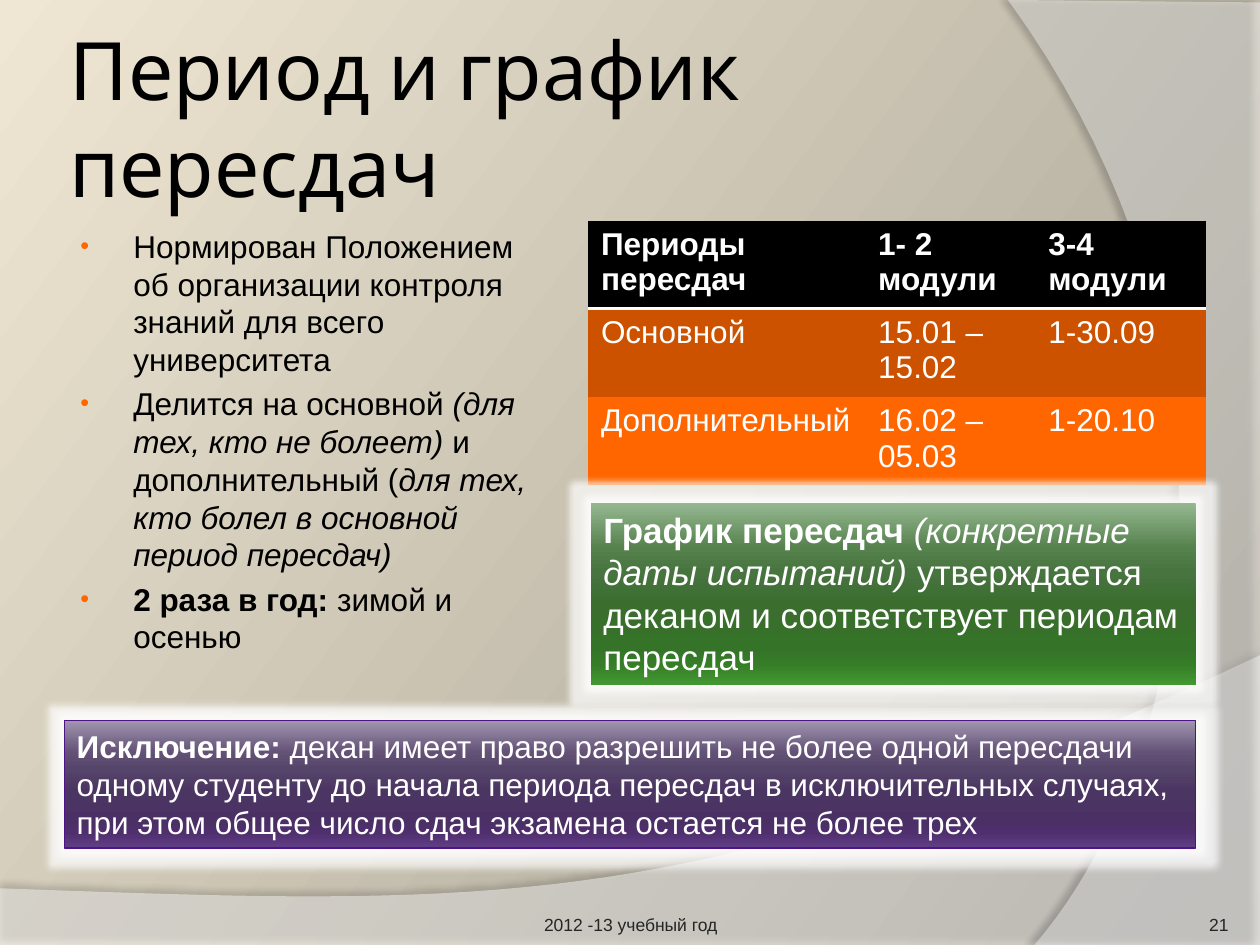
from lxml.etree import SubElement
from pptx import Presentation
from pptx.dml.color import RGBColor
from pptx.enum.shapes import MSO_SHAPE as Shape
from pptx.enum.text import MSO_ANCHOR as Anchor, PP_ALIGN as Align
from pptx.oxml import parse_xml
from pptx.oxml.ns import nsdecls, qn
from pptx.util import Inches, Pt

rgb = RGBColor.from_string


def set_gradient(fill, element, stops, angle):
    fill.gradient()
    gradient = element.find(".//" + qn("a:gradFill"))
    for child in list(gradient):
        gradient.remove(child)
    stop_list = SubElement(gradient, qn("a:gsLst"))
    for position, color in stops:
        stop = SubElement(stop_list, qn("a:gs"), pos=str(position * 1000))
        SubElement(stop, qn("a:srgbClr"), val=color)
    SubElement(gradient, qn("a:lin"), ang=str(angle * 60000), scaled="0")


def write_text(frame, paragraphs, size, color, font="Arial", align=Align.LEFT, **frame_format):
    for name, value in {"word_wrap": True, **frame_format}.items():
        setattr(frame, name, value)
    for index, runs in enumerate(paragraphs):
        paragraph = frame.add_paragraph() if index else frame.paragraphs[0]
        paragraph.alignment = align
        for text, style in runs:
            run = paragraph.add_run()
            run.text = text
            run.font.color.rgb = rgb(color)
            run_format = {"name": font, "size": Pt(size), "bold": "b" in style, "italic": "i" in style}
            for name, value in run_format.items():
                setattr(run.font, name, value)


presentation = Presentation()
presentation.slide_width, presentation.slide_height = Inches(10), Inches(7.5)
slide = presentation.slides.add_slide(presentation.slide_layouts[6])
set_gradient(slide.background.fill, slide._element, [(0, "9B9689"), (30, "B9B3A4"), (100, "EFE7D3")], 217)

waves = [
    ([(0, 7.05), (0, 7.51), (10, 7.51)], [(10, 5.2), (5.59, 7.29), (3.91, 7.19), (0, 7.05)], 45, 35, 3.5, 270),
    ([(8, 0), (10, 0.02), (10, 7.5)], [(8.21, 7.5), (9.35, 6.19), (10.18, 3), (8, 0)], 40, 45, 4, 180),
]
steps = 40
for corners, curve, opacity, shadow_opacity, distance, direction in waves:
    points = list(corners)
    for step in range(steps + 1):
        t = step / steps
        weights = [(1 - t) ** 3, 3 * t * (1 - t) ** 2, 3 * t**2 * (1 - t), t**3]
        points.append(tuple(sum(w * point[axis] for w, point in zip(weights, curve)) for axis in (0, 1)))
    points = [(Inches(x), Inches(y)) for x, y in points]
    builder = slide.shapes.build_freeform(*points[0])
    builder.add_line_segments(points[1:], close=True)
    wave = builder.convert_to_shape()
    wave.fill.solid()
    wave.fill.fore_color.rgb = rgb("FFFFFF")
    wave.line.fill.background()
    wave.shadow.inherit = False
    properties = wave._element.spPr
    SubElement(properties.find(".//" + qn("a:srgbClr")), qn("a:alpha"), val=str(opacity * 1000))
    shadow = SubElement(
        properties.find(qn("a:effectLst")), qn("a:outerShdw"), blurRad=str(Pt(4)),
        dist=str(Pt(distance)), dir=str(direction * 60000), algn="ctr", rotWithShape="0",
    )
    shadow_color = SubElement(shadow, qn("a:srgbClr"), val="000000")
    SubElement(shadow_color, qn("a:alpha"), val=str(shadow_opacity * 1000))

title = slide.shapes.add_textbox(Inches(0.5), Inches(0.3), Inches(8.17), Inches(1.25))
margins = {f"margin_{side}": Inches(0.05) for side in ("left", "top", "right", "bottom")}
write_text(title.text_frame, [[("Период и график пересдач", "")]], 46, "000000", "Cabin",
           vertical_anchor=Anchor.MIDDLE, **margins)

body = slide.shapes.add_textbox(Inches(0.5), Inches(1.75), Inches(4), Inches(3.65))
write_text(body.text_frame, [
    [("Нормирован Положением об организации контроля знаний для всего университета", "")],
    [("Делится на основной ", ""), ("(для тех, кто не болеет)", "i"), (" и дополнительный (", ""),
     ("для тех, кто болел в основной период пересдач)", "i")],
    [("2 раза в год: ", "b"), ("зимой и осенью", "")],
], 18, "000000")
for paragraph in body.text_frame.paragraphs:
    properties = paragraph._p.get_or_add_pPr()
    properties.set("marL", str(Inches(0.46)))
    properties.set("indent", str(Inches(-0.42)))
    spacing = SubElement(properties, qn("a:spcBef"))
    SubElement(spacing, qn("a:spcPct"), val="20000")
    bullet_color = SubElement(properties, qn("a:buClr"))
    SubElement(bullet_color, qn("a:srgbClr"), val="FF6600")
    SubElement(properties, qn("a:buSzPct"), val="80000")
    SubElement(properties, qn("a:buFont"), typeface="Arial")
    SubElement(properties, qn("a:buChar"), char="•")

rows = [
    ("000000", "b", ["Периоды пересдач", "1- 2 модули", "3-4 модули"]),
    ("CC5200", "", ["Основной", "15.01 – 15.02", "1-30.09"]),
    ("FF6600", "", ["Дополнительный", "16.02 – 05.03", "1-20.10"]),
]
table = slide.shapes.add_table(3, 3, Inches(4.67), Inches(1.75), Inches(4.9), Inches(1.98)).table
table._tbl.tblPr.find(qn("a:tableStyleId")).text = "{2D5ABB26-0587-4C30-8999-92F81FD0307C}"
for column, width in zip(table.columns, (2.2, 1.35, 1.35)):
    column.width = Inches(width)
for row_index, (color, style, texts) in enumerate(rows):
    for column_index, text in enumerate(texts):
        cell = table.cell(row_index, column_index)
        cell.fill.solid()
        cell.fill.fore_color.rgb = rgb(color)
        write_text(cell.text_frame, [[(text, style)]], 18, "FFFFFF")
        if row_index == 0:
            cell._tc.get_or_add_tcPr().insert(0, parse_xml(
                f'<a:lnB {nsdecls("a")} w="{Pt(2)}"><a:solidFill><a:srgbClr val="FFFFFF"/></a:solidFill></a:lnB>'
            ))

footers = [
    (3.42, 3.17, "2012 -13 учебный год", Align.CENTER, 0.05),
    (8.92, 0.83, "21", Align.RIGHT, 0),
]
for left, width, text, align, top_margin in footers:
    footer = slide.shapes.add_textbox(Inches(left), Inches(7.02), Inches(width), Inches(0.4))
    write_text(footer.text_frame, [[(text, "")]], 10, "252525", align=align, vertical_anchor=Anchor.BOTTOM,
               margin_left=0, margin_right=0, margin_bottom=0, margin_top=Inches(top_margin))

positions = (0, 25, 38, 55, 80, 88, 100)
boxes = [
    ((4.69, 3.99, 4.8, 1.45), "96B891 55814D 487440 3A6D2E 357328 357D26 449833", None, 20,
     [("График пересдач ", "b"), ("(конкретные даты испытаний) ", "i"),
      ("утверждается деканом и соответствует периодам пересдач", "")]),
    ((0.51, 5.72, 8.98, 1.01), "A095AF 635176 56456A 4B3562 4B3066 4F2F6E 613E86", "4D1387", 18,
     [("Исключение: ", "b"),
      ("декан имеет право разрешить не более одной пересдачи одному студенту до начала периода пересдач "
       "в исключительных случаях, при этом общее число сдач экзамена остается не более трех", "")]),
]
for place, colors, line_color, size, runs in boxes:
    box = slide.shapes.add_shape(Shape.RECTANGLE, *map(Inches, place))
    set_gradient(box.fill, box._element, zip(positions, colors.split()), 90)
    if line_color:
        box.line.color.rgb = rgb(line_color)
        box.line.width = Pt(0.75)
    else:
        box.line.fill.background()
    box.shadow.inherit = False
    glow = SubElement(box._element.spPr.find(qn("a:effectLst")), qn("a:glow"), rad=str(Pt(8)))
    glow_color = SubElement(glow, qn("a:srgbClr"), val="FFFFFF")
    SubElement(glow_color, qn("a:alpha"), val="70000")
    write_text(box.text_frame, [runs], size, "FFFFFF", vertical_anchor=Anchor.TOP)

presentation.save("out.pptx")
